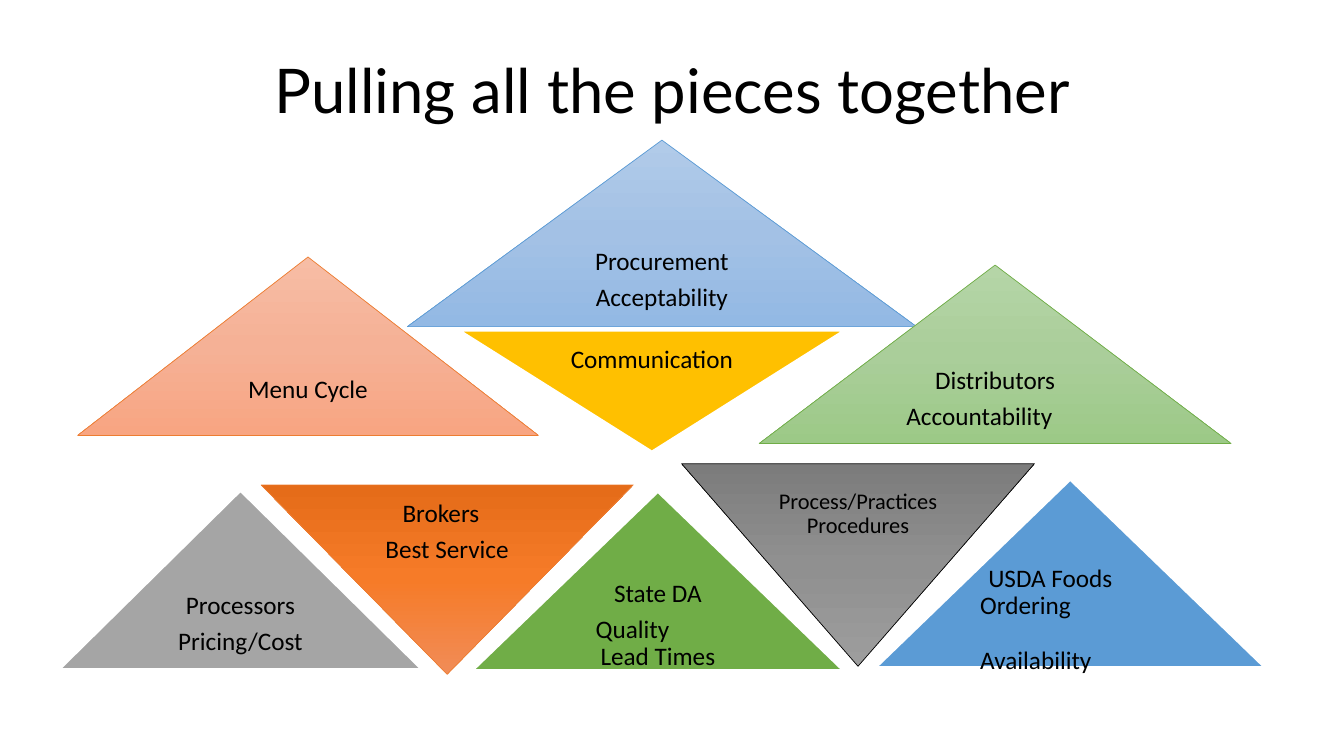
from copy import deepcopy

from pptx import Presentation
from pptx.dml.color import RGBColor
from pptx.enum.shapes import MSO_SHAPE
from pptx.enum.text import MSO_ANCHOR, PP_ALIGN
from pptx.oxml.ns import qn
from pptx.util import Inches, Pt

BLACK = RGBColor(0x00, 0x00, 0x00)
WHITE = RGBColor(0xFF, 0xFF, 0xFF)
BLUE = RGBColor(0x5B, 0x9B, 0xD5)
ORANGE = RGBColor(0xED, 0x7D, 0x31)
GREEN = RGBColor(0x70, 0xAD, 0x47)
GOLD = RGBColor(0xFF, 0xC0, 0x00)
GRAY = RGBColor(0xA5, 0xA5, 0xA5)
BLUE_FADE = [RGBColor(0xB1, 0xCB, 0xE9), RGBColor(0xA3, 0xC1, 0xE5), RGBColor(0x93, 0xB9, 0xE4)]
PEACH_FADE = [RGBColor(0xF7, 0xBD, 0xA5), RGBColor(0xF5, 0xB1, 0x96), RGBColor(0xF8, 0xA5, 0x82)]
GREEN_FADE = [RGBColor(0xB5, 0xD5, 0xA7), RGBColor(0xAA, 0xCE, 0x9A), RGBColor(0x9C, 0xC9, 0x87)]
ORANGE_FADE = [RGBColor(0xF1, 0x8C, 0x57), RGBColor(0xF6, 0x7B, 0x28), RGBColor(0xE5, 0x6C, 0x19)]
GRAY_FADE = [RGBColor(0x9D, 0x9D, 0x9D), RGBColor(0x90, 0x90, 0x90), RGBColor(0x7C, 0x7C, 0x7C)]

TITLE_FONT = {"name": "Lato", "size": Pt(44)}
LABEL_FONT = {"name": "Calibri", "size": Pt(18)}
SMALL_FONT = {"name": "Calibri", "size": Pt(16)}
TITLE_FRAME = {"word_wrap": True, "vertical_anchor": MSO_ANCHOR.MIDDLE}
LABEL_FRAME = TITLE_FRAME | {
    f"margin_{side}": Inches(0.07) for side in ("left", "top", "right", "bottom")
}
GAP = 6.3

# text, indent (None centres the line), space before in points
PIECES = [
    ((4.04, 1.39, 5.05, 1.85), False, BLUE_FADE, BLUE, LABEL_FONT,
     [("Procurement", None, 0), ("Acceptability", None, GAP)]),
    ((0.77, 2.55, 4.57, 1.77), False, PEACH_FADE, ORANGE, LABEL_FONT,
     [("Menu Cycle", None, 0)]),
    ((4.56, 3.28, 3.81, 1.2), True, GOLD, WHITE, LABEL_FONT,
     [("Communication", None, 0)]),
    ((7.53, 2.63, 4.68, 1.77), False, GREEN_FADE, GREEN, LABEL_FONT,
     [("Distributors", None, 0), ("Accountability", 0.22, GAP)]),
    ((0.59, 4.87, 3.59, 1.77), False, GRAY, WHITE, LABEL_FONT,
     [("Processors", None, 0), ("Pricing/Cost", None, GAP)]),
    ((2.59, 4.81, 3.69, 1.88), True, ORANGE_FADE, ORANGE, LABEL_FONT,
     [("Brokers", 0.41, 0), ("Best Service", None, GAP)]),
    ((4.69, 4.88, 3.67, 1.77), False, GREEN, WHITE, LABEL_FONT,
     [("State DA", None, 0), ("Quality", 0.23, GAP), ("Lead Times", None, 0)]),
    ((6.76, 4.6, 3.5, 2.01), True, GRAY_FADE, BLACK, SMALL_FONT,
     [("Process/Practices Procedures", None, 0)]),
    ((8.69, 4.76, 3.85, 1.86), False, BLUE, WHITE, LABEL_FONT,
     [("USDA Foods", 0.08, 0), ("Ordering", 0, 0), ("Availability", 0, 19.6)]),
]


def apply_format(target, values):
    for name, value in values.items():
        setattr(target, name, value)


def add_text(slide, box, lines, font_format, frame_format):
    frame = slide.shapes.add_textbox(*map(Inches, box)).text_frame
    apply_format(frame, frame_format)
    for index, (text, indent, space_before) in enumerate(lines):
        paragraph = frame.add_paragraph() if index else frame.paragraphs[0]
        apply_format(paragraph, {
            "alignment": PP_ALIGN.CENTER if indent is None else PP_ALIGN.LEFT,
            "line_spacing": 0.9,
            "space_before": Pt(space_before),
        })
        if indent:
            paragraph._p.get_or_add_pPr().set("marL", str(Inches(indent)))
        run = paragraph.add_run()
        run.text = text
        apply_format(run.font, font_format)
        run.font.color.rgb = BLACK


def fill_gradient(shape, colors):
    shape.fill.gradient()
    shape.fill.gradient_angle = 270
    stop_list = shape._element.spPr.find(".//" + qn("a:gsLst"))
    stop_list.insert(1, deepcopy(stop_list[0]))
    for index, (stop, color) in enumerate(zip(shape.fill.gradient_stops, colors)):
        stop.position = index / 2
        stop.color.rgb = color


def add_piece(slide, box, inverted, fill, line_color, font_format, lines):
    left, top, width, height = box
    triangle = slide.shapes.add_shape(MSO_SHAPE.ISOSCELES_TRIANGLE, *map(Inches, box))
    triangle.shadow.inherit = False
    triangle.rotation = 180 if inverted else 0
    if isinstance(fill, list):
        fill_gradient(triangle, fill)
    else:
        triangle.fill.solid()
        triangle.fill.fore_color.rgb = fill
    triangle.line.color.rgb = line_color
    triangle.line.width = Pt(1.5 if line_color == WHITE else 0.5)
    label_top = top if inverted else top + height / 2
    label_box = (left + width / 4, label_top, width / 2, height / 2)
    add_text(slide, label_box, lines, font_format, LABEL_FRAME)


def main():
    presentation = Presentation()
    presentation.slide_width = Inches(13.33)
    presentation.slide_height = Inches(7.5)
    slide = presentation.slides.add_slide(presentation.slide_layouts[6])
    title = [("Pulling all the pieces together", None, 0)]
    add_text(slide, (0.92, 0.2, 11.5, 1.45), title, TITLE_FONT, TITLE_FRAME)
    for piece in PIECES:
        add_piece(slide, *piece)
    presentation.save("out.pptx")


if __name__ == "__main__":
    main()
